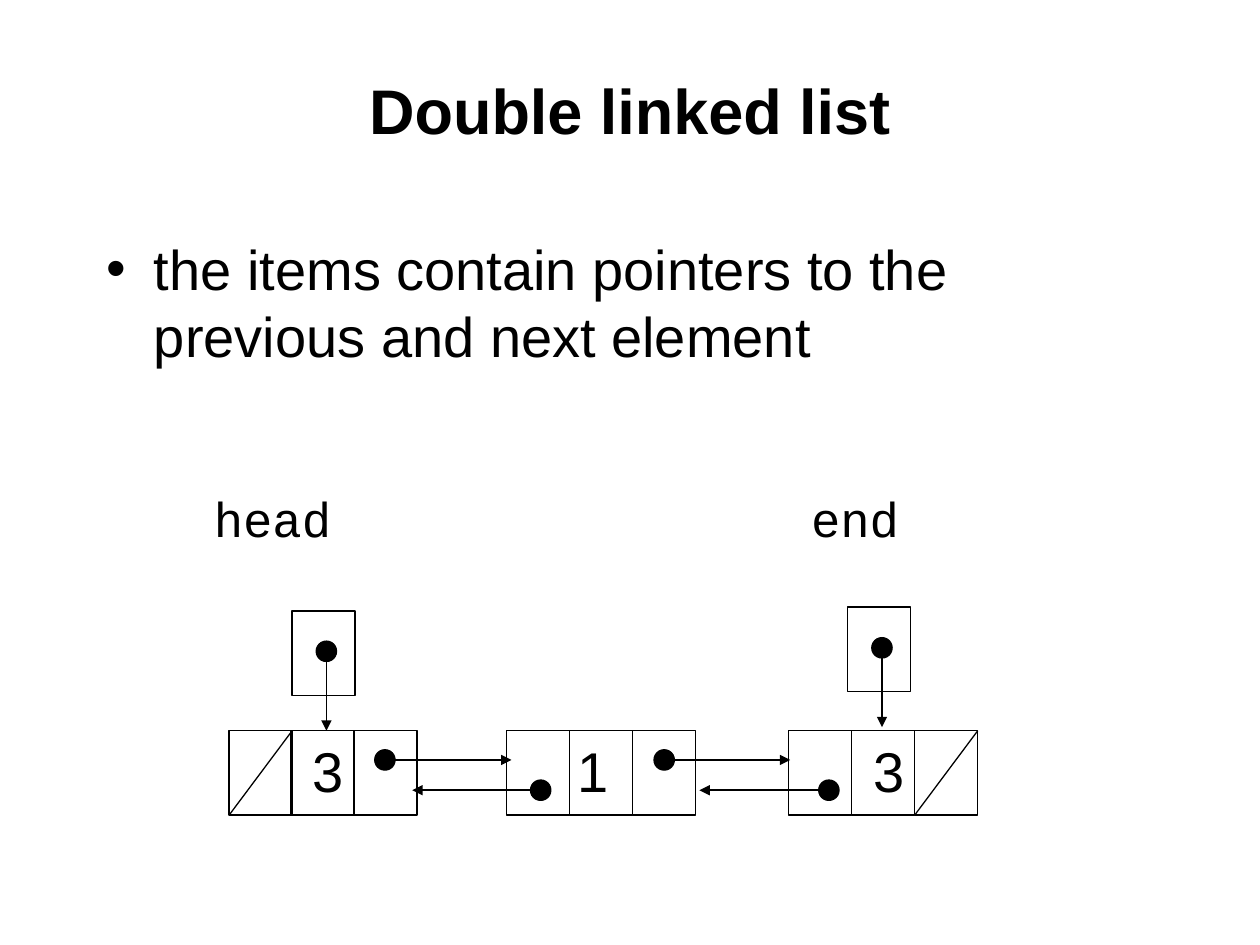
from dataclasses import dataclass
from typing import Any

from lxml import etree
from pptx import Presentation
from pptx.dml.color import RGBColor
from pptx.enum.shapes import MSO_CONNECTOR, MSO_SHAPE
from pptx.enum.text import MSO_ANCHOR, MSO_AUTO_SIZE, PP_ALIGN
from pptx.oxml.ns import qn
from pptx.util import Cm, Pt

RECTANGLE, OVAL = MSO_SHAPE.RECTANGLE, MSO_SHAPE.OVAL
STRAIGHT = MSO_CONNECTOR.STRAIGHT
LEFT, CENTER = PP_ALIGN.LEFT, PP_ALIGN.CENTER
TOP, MIDDLE = MSO_ANCHOR.TOP, MSO_ANCHOR.MIDDLE
FIXED, GROW = MSO_AUTO_SIZE.NONE, MSO_AUTO_SIZE.SHAPE_TO_FIT_TEXT


@dataclass(frozen=True)
class Theme:
    ink: RGBColor = RGBColor(0x00, 0x00, 0x00)
    sans: str = "Arial"
    mono: str = "Courier New"
    title_size: int = 36
    body_size: int = 32
    label_size: int = 28
    outline: float = 0.75
    arrow: float = 1.0


@dataclass(frozen=True)
class Node:
    """A list item: previous cell, data cell, next cell."""
    previous_left: float
    data_left: float
    value: str
    value_left: float
    alignment: Any


@dataclass(frozen=True)
class Pointer:
    """A dot at the start and an arrowhead at the end, in cm."""
    start: tuple[float, float]
    end: tuple[float, float]


@dataclass(frozen=True)
class Anchor:
    """A named variable holding one pointer."""
    name: str
    label_left: float
    label_width: float
    box_left: float
    box_top: float
    pointer: Pointer


THEME = Theme()
CELL_WIDTH, CELL_HEIGHT, DOT = 1.27, 1.7, 0.41
ROW_TOP, LABEL_TOP = 14.73, 9.73
NEXT_Y, PREVIOUS_Y = 15.32, 15.93

NODES = [
    Node(4.62, 5.87, "3", 6.05, CENTER),
    Node(10.21, 11.48, "1", 11.4, LEFT),
    Node(15.9, 17.17, "3", 17.35, CENTER),
]
LINKS = [
    Pointer((7.76, NEXT_Y), (10.31, NEXT_Y)),
    Pointer((13.39, NEXT_Y), (15.93, NEXT_Y)),
    Pointer((10.9, PREVIOUS_Y), (8.31, PREVIOUS_Y)),
    Pointer((16.71, PREVIOUS_Y), (14.1, PREVIOUS_Y)),
]
ANCHORS = [
    Anchor("head", 4.06, 2.9, 5.89, 12.32, Pointer((6.58, 13.13), (6.58, 14.73))),
    Anchor("end", 16.1, 2.31, 17.09, 12.24, Pointer((17.78, 13.06), (17.78, 14.66))),
]


def apply_format(target: Any, values: dict[str, Any]) -> None:
    for name, value in values.items():
        setattr(target, name, value)


def place(shape: Any, left: float, top: float, width: float, height: float) -> None:
    apply_format(shape, {"left": Cm(left), "top": Cm(top),
                         "width": Cm(width), "height": Cm(height)})


def write(shape: Any, text: str, font: str, size: int, alignment: Any,
          frame_format: dict[str, Any], bold: bool = False) -> Any:
    apply_format(shape.text_frame, frame_format)
    paragraph = shape.text_frame.paragraphs[0]
    paragraph.alignment = alignment
    run = paragraph.add_run()
    run.text = text
    apply_format(run.font, {"name": font, "size": Pt(size), "bold": bold})
    run.font.color.rgb = THEME.ink
    return paragraph


def add_label(slide: Any, text: str, left: float, top: float, width: float,
              height: float, font: str, size: int, alignment: Any) -> None:
    box = slide.shapes.add_textbox(Cm(left), Cm(top), Cm(width), Cm(height))
    write(box, text, font, size, alignment, {"word_wrap": False, "auto_size": GROW})


def add_outlined(slide: Any, kind: Any, left: float, top: float,
                 width: float, height: float) -> Any:
    shape = slide.shapes.add_shape(kind, Cm(left), Cm(top), Cm(width), Cm(height))
    shape.shadow.inherit = False
    shape.fill.background()
    shape.line.color.rgb = THEME.ink
    shape.line.width = Pt(THEME.outline)
    return shape


def add_cell(slide: Any, left: float, top: float) -> None:
    add_outlined(slide, RECTANGLE, left, top, CELL_WIDTH, CELL_HEIGHT)


def add_line(slide: Any, start: tuple[float, float], end: tuple[float, float],
             width: float, arrow: bool = False) -> None:
    line = slide.shapes.add_connector(STRAIGHT, *(Cm(value) for value in start + end))
    line.line.color.rgb = THEME.ink
    line.line.width = Pt(width)
    if arrow:
        etree.SubElement(line.line._get_or_add_ln(), qn("a:tailEnd"), type="triangle")
    etree.SubElement(line._element.spPr, qn("a:effectLst"))


def add_pointer(slide: Any, pointer: Pointer) -> None:
    add_line(slide, pointer.start, pointer.end, THEME.arrow, arrow=True)
    x, y = pointer.start
    dot = add_outlined(slide, OVAL, x - DOT / 2, y - DOT / 2, DOT, DOT)
    dot.fill.solid()
    dot.fill.fore_color.rgb = THEME.ink


def add_node(slide: Any, node: Node) -> None:
    for left in (node.previous_left, node.data_left, node.data_left + CELL_WIDTH):
        add_cell(slide, left, ROW_TOP)
    add_label(slide, node.value, node.value_left, ROW_TOP, 1.14, 1.6,
              THEME.sans, THEME.body_size, node.alignment)


def add_null(slide: Any, left: float) -> None:
    add_line(slide, (left + CELL_WIDTH, ROW_TOP), (left, ROW_TOP + CELL_HEIGHT),
             THEME.outline)


def add_anchor(slide: Any, anchor: Anchor) -> None:
    add_label(slide, anchor.name, anchor.label_left, LABEL_TOP, anchor.label_width,
              1.45, THEME.mono, THEME.label_size, LEFT)
    add_cell(slide, anchor.box_left, anchor.box_top)
    add_pointer(slide, anchor.pointer)


def add_heading_and_list(slide: Any) -> None:
    title, body = slide.shapes.title, slide.placeholders[1]
    place(title, 1.9, 0.91, 21.6, 2.59)
    write(title, "Double linked list", THEME.sans, THEME.title_size, CENTER,
          {"vertical_anchor": MIDDLE, "word_wrap": True, "auto_size": FIXED}, bold=True)
    place(body, 1.9, 4.6, 21.6, 3.12)
    paragraph = write(body, "the items contain pointers to the previous and next element",
                      THEME.sans, THEME.body_size, LEFT,
                      {"vertical_anchor": TOP, "word_wrap": True, "auto_size": FIXED})
    properties = paragraph._p.get_or_add_pPr()
    properties.set("marL", str(Cm(0.95)))
    properties.set("indent", str(-Cm(0.95)))
    etree.SubElement(properties, qn("a:buChar"), char="•")


def main() -> None:
    presentation = Presentation()
    presentation.slide_width, presentation.slide_height = Cm(25.4), Cm(19.05)
    slide = presentation.slides.add_slide(presentation.slide_layouts[1])
    add_heading_and_list(slide)
    # List items, with a slash in both unused pointer cells
    for node in NODES:
        add_node(slide, node)
    add_null(slide, NODES[0].previous_left)
    add_null(slide, NODES[-1].data_left + CELL_WIDTH)
    # Links between the items, then the variables above them
    for link in LINKS:
        add_pointer(slide, link)
    for anchor in ANCHORS:
        add_anchor(slide, anchor)
    presentation.save("out.pptx")


if __name__ == "__main__":
    main()
